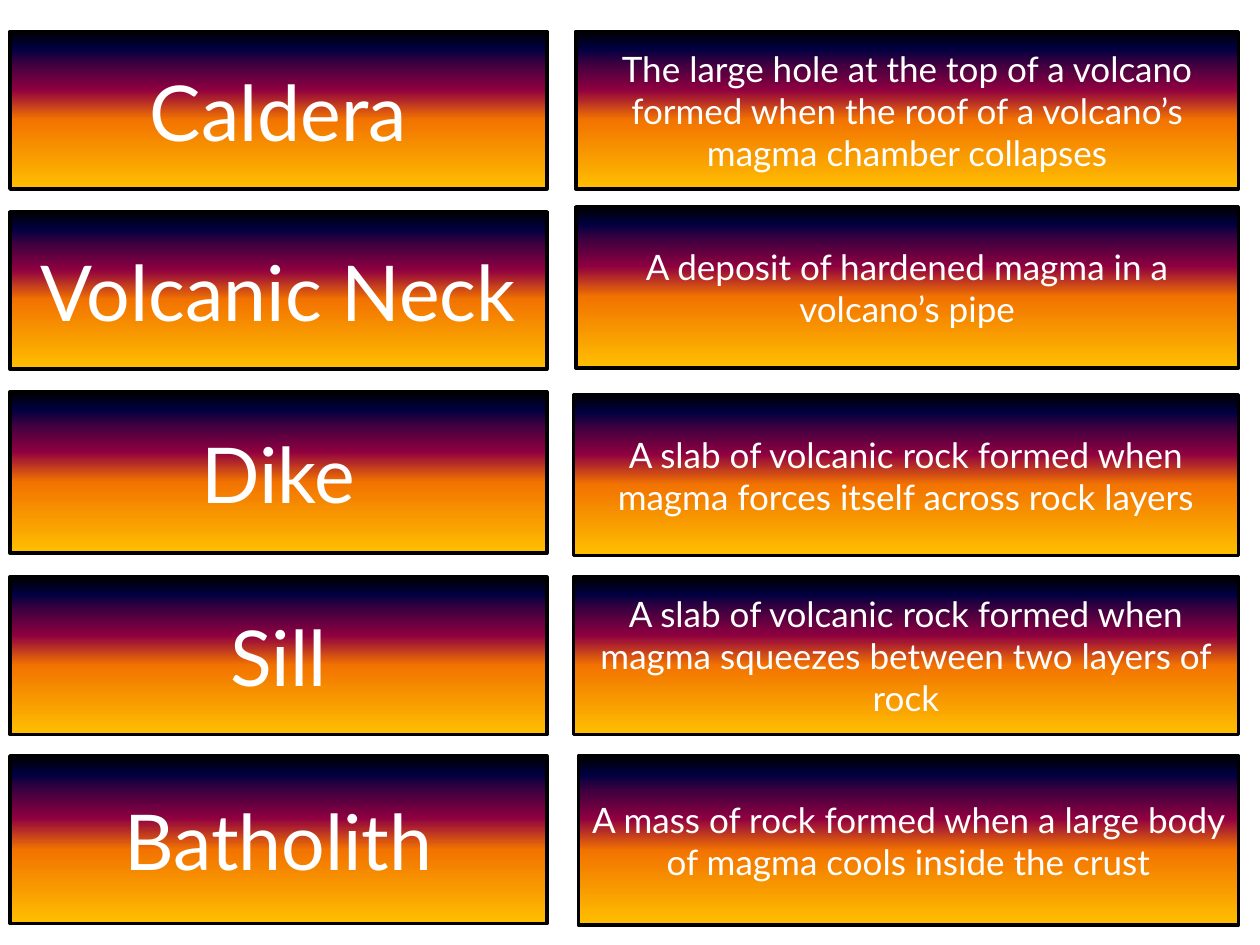
from lxml.etree import SubElement
from pptx import Presentation
from pptx.dml.color import RGBColor
from pptx.enum.shapes import MSO_SHAPE
from pptx.enum.text import MSO_ANCHOR, PP_ALIGN
from pptx.oxml.ns import qn
from pptx.util import Inches, Pt

BLACK = RGBColor(0x00, 0x00, 0x00)
WHITE = RGBColor(0xFF, 0xFF, 0xFF)
NAVY = RGBColor(0x00, 0x00, 0x40)
PURPLE = RGBColor(0x40, 0x00, 0x40)
CRIMSON = RGBColor(0x8F, 0x00, 0x40)
ORANGE = RGBColor(0xF2, 0x73, 0x00)
AMBER = RGBColor(0xFF, 0xBF, 0x00)

# Position in percent, colour
LAVA = [(0, BLACK), (11, NAVY), (21, PURPLE), (37, CRIMSON), (56, ORANGE), (100, AMBER)]

TERM_LEFT, TERM_WIDTH = 0.08, 4.26
RIGHT_EDGE = 9.83

# Term, (top, height), definition, (left, top, height)
CARDS = [
    ("Caldera", (0.25, 1.25),
     "The large hole at the top of a volcano formed when the roof of a volcano’s "
     "magma chamber collapses", (4.57, 0.25, 1.25)),
    ("Volcanic Neck", (1.68, 1.25),
     "A deposit of hardened magma in a volcano’s pipe", (4.57, 1.64, 1.28)),
    ("Dike", (3.11, 1.28),
     "A slab of volcanic rock formed when magma forces itself across rock layers",
     (4.55, 3.13, 1.28)),
    ("Sill", (4.58, 1.25),
     "A slab of volcanic rock formed when magma squeezes between two layers of rock",
     (4.55, 4.58, 1.25)),
    ("Batholith", (6, 1.33),
     "A mass of rock formed when a large body of magma cools inside the crust",
     (4.59, 6, 1.34)),
]


class CardPage:
    """Style of the vocabulary cards and the slide they are placed on."""
    font_name = "Lato"
    term_size = Pt(44)
    definition_size = Pt(20)
    border = Pt(2)

    def __init__(self, page):
        self.page = page

    def fill_lava(self, box):
        """Fill the box with the multi-stop gradient, running downwards."""
        box.fill.gradient()
        box.fill.gradient_angle = 270
        stops = box._element.spPr.find(qn("a:gradFill")).find(qn("a:gsLst"))
        for stop in list(stops):
            stops.remove(stop)
        for percent, color in LAVA:
            stop = SubElement(stops, qn("a:gs"), pos=str(percent * 1000))
            SubElement(stop, qn("a:srgbClr"), val=str(color))

    def card(self, text, left, top, width, height, size):
        box = self.page.shapes.add_shape(
            MSO_SHAPE.FLOWCHART_PROCESS,
            Inches(left), Inches(top), Inches(width), Inches(height))
        box.shadow.inherit = False
        self.fill_lava(box)
        box.line.color.rgb = BLACK
        box.line.width = self.border
        frame = box.text_frame
        frame.word_wrap = True
        frame.vertical_anchor = MSO_ANCHOR.MIDDLE
        frame.text = text
        para = frame.paragraphs[0]
        para.alignment = PP_ALIGN.CENTER
        font = para.runs[0].font
        font.name = self.font_name
        font.size = size
        font.color.rgb = WHITE

    def term(self, text, top, height):
        self.card(text, TERM_LEFT, top, TERM_WIDTH, height, self.term_size)

    def definition(self, text, left, top, height):
        self.card(text, left, top, RIGHT_EDGE - left, height, self.definition_size)


def main():
    deck = Presentation()
    deck.slide_width, deck.slide_height = Inches(10), Inches(7.5)
    blank_layout = deck.slide_layouts[6]
    cards = CardPage(deck.slides.add_slide(blank_layout))
    for term, term_place, definition, definition_place in CARDS:
        cards.term(term, *term_place)
        cards.definition(definition, *definition_place)
    deck.save("out.pptx")


if __name__ == "__main__":
    main()
